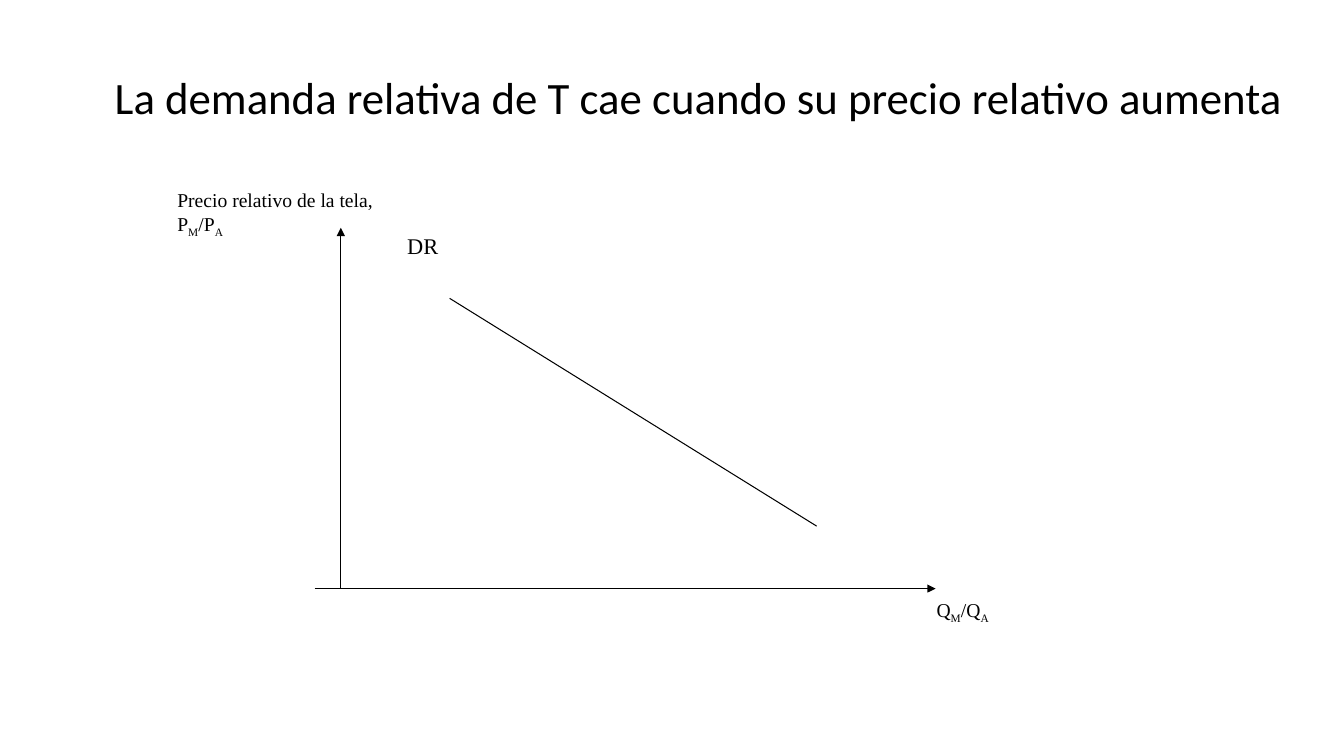
from lxml import etree
from pptx import Presentation
from pptx.dml.color import RGBColor
from pptx.enum.shapes import MSO_CONNECTOR, MSO_SHAPE
from pptx.enum.text import MSO_ANCHOR, PP_ALIGN
from pptx.oxml.ns import qn
from pptx.util import Pt

PX = 9144  # EMU per px, 100 px to the inch
SLIDE_SIZE = (1333, 750)
BLANK_LAYOUT = 6
BLACK = RGBColor(0, 0, 0)
WHITE = RGBColor(255, 255, 255)
RECTANGLE = MSO_SHAPE.RECTANGLE
STRAIGHT = MSO_CONNECTOR.STRAIGHT
TOP, MIDDLE = MSO_ANCHOR.TOP, MSO_ANCHOR.MIDDLE
LEFT, CENTER = PP_ALIGN.LEFT, PP_ALIGN.CENTER
SUBSCRIPT = "-25000"

TITLE = "La demanda relativa de T cae cuando su precio relativo aumenta"
TITLE_BOX = (89, 33, 1208, 125)

# Box, text size and text pieces; every second piece is a subscript
LABELS = [
    ((166, 182, 238, 114), 14, ["Precio relativo de la tela, P", "M", "/P", "A"]),
    ((394, 225, 117, 59), 16, ["DR"]),
    ((919, 588, 231, 106), 14, ["Q", "M", "/Q", "A"]),
]

AXIS_Y = 584
PRICE_AXIS = (338, AXIS_Y, 338, 226)
QUANTITY_AXIS = (312, AXIS_Y, 928, AXIS_Y)
DEMAND_LINE = (810, 522, 446, 296)


def emu(lengths):
    return [length * PX for length in lengths]


def write_text(box, pieces, font_name, size, align, anchor):
    frame = box.text_frame
    frame.word_wrap = True
    frame.vertical_anchor = anchor
    para = frame.paragraphs[0]
    para.alignment = align
    for index, piece in enumerate(pieces):
        span = para.add_run()
        span.text = piece
        span.font.name = font_name
        span.font.size = Pt(size)
        span.font.color.rgb = BLACK
        if index % 2:
            span._r.get_or_add_rPr().set("baseline", SUBSCRIPT)


def add_label(page, place, size, pieces):
    box = page.shapes.add_shape(RECTANGLE, *emu(place))
    box.shadow.inherit = False
    box.fill.solid()
    box.fill.fore_color.rgb = WHITE
    box.line.fill.background()
    write_text(box, pieces, "Times New Roman", size, LEFT, TOP)


def add_line(page, ends, arrow):
    line = page.shapes.add_connector(STRAIGHT, *emu(ends))
    line.line.color.rgb = BLACK
    line.line.width = Pt(0.75)
    if arrow:
        outline = line.line._get_or_add_ln()
        etree.SubElement(outline, qn("a:tailEnd"), type="triangle")
    etree.SubElement(line._element.spPr, qn("a:effectLst"))


def main():
    deck = Presentation()
    deck.slide_width, deck.slide_height = emu(SLIDE_SIZE)
    page = deck.slides.add_slide(deck.slide_layouts[BLANK_LAYOUT])

    title = page.shapes.add_textbox(*emu(TITLE_BOX))
    write_text(title, [TITLE], "Calibri", 32, CENTER, MIDDLE)

    *upper_labels, quantity_label = LABELS
    for label in upper_labels:
        add_label(page, *label)
    add_line(page, PRICE_AXIS, arrow=True)
    add_line(page, QUANTITY_AXIS, arrow=True)
    add_line(page, DEMAND_LINE, arrow=False)
    add_label(page, *quantity_label)

    deck.save("out.pptx")


if __name__ == "__main__":
    main()
